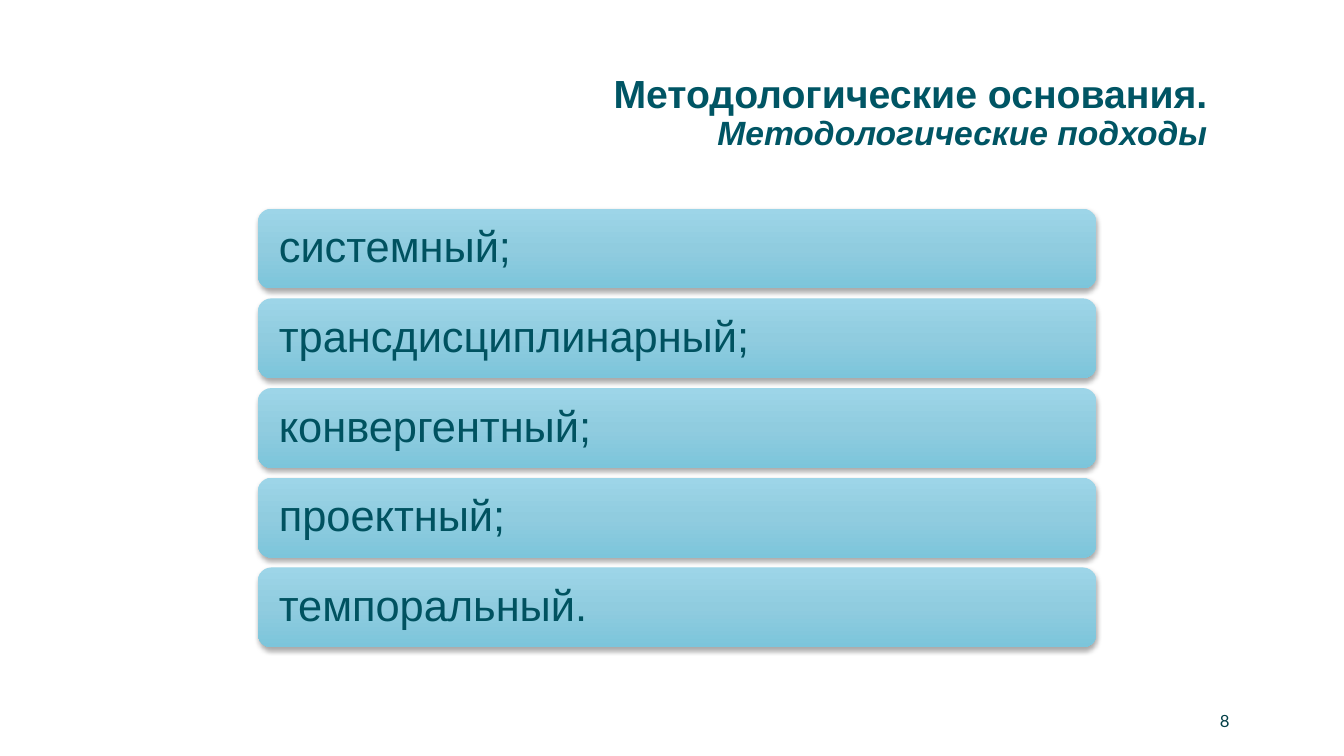
from copy import deepcopy

from lxml import etree
from pptx import Presentation
from pptx import util as u
from pptx.dml.color import RGBColor
from pptx.enum import shapes, text
from pptx.oxml.ns import qn

HEADING = RGBColor(0x00, 0x55, 0x64)
APPROACH = RGBColor(0x00, 0x52, 0x60)
NUMBER = RGBColor(0x02, 0x3F, 0x47)
GRADIENT = [
    (0, RGBColor(0x9D, 0xD5, 0xE8)),
    (0.5, RGBColor(0x90, 0xCC, 0xDF)),
    (1, RGBColor(0x7C, 0xC5, 0xDB)),
]
APPROACHES = [
    "системный;",
    "трансдисциплинарный;",
    "конвергентный;",
    "проектный;",
    "темпоральный.",
]
BAR_LEFT, BAR_TOP, BAR_WIDTH, BAR_HEIGHT = 6.5, 5.26, 21.13, 2.01
BAR_STEP = 2.26


def add_text(paragraph, words, size, color, font="Arial", bold=None, italic=None,
             align=text.PP_ALIGN.LEFT, spacing=None):
    run = paragraph.add_run()
    run.text = words
    run.font.name = font
    run.font.size = u.Pt(size)
    run.font.color.rgb = color
    run.font.bold = bold
    run.font.italic = italic
    paragraph.alignment = align
    paragraph.line_spacing = spacing


def place_heading(slide):
    heading = slide.shapes.title
    heading.left, heading.top = u.Cm(8.94), u.Cm(1.75)
    heading.width, heading.height = u.Cm(21.74), u.Cm(3.35)
    frame = heading.text_frame
    frame.word_wrap = True
    frame.auto_size = text.MSO_AUTO_SIZE.NONE
    frame.vertical_anchor = text.MSO_ANCHOR.TOP
    line = frame.paragraphs[0]
    style = dict(color=HEADING, bold=True, align=text.PP_ALIGN.RIGHT, spacing=0.9)
    add_text(line, "Методологические основания.", 28, **style)
    line.add_line_break()
    add_text(line, "Методологические подходы", 24, italic=True, **style)


def fill_gradient(bar):
    bar.fill.gradient()
    bar.fill.gradient_angle = 270
    stop_list = bar._element.spPr.find(".//" + qn("a:gsLst"))
    stop_list.insert(1, deepcopy(stop_list[0]))
    for stop, (position, color) in zip(bar.fill.gradient_stops, GRADIENT):
        stop.position = position
        stop.color.rgb = color


def cast_shadow(bar):
    bar.shadow.inherit = False
    effects = bar._element.spPr.find(qn("a:effectLst"))
    shadow = etree.SubElement(effects, qn("a:outerShdw"), blurRad=str(u.Pt(3.5)),
                              dist=str(u.Pt(2.2)), dir="5400000", rotWithShape="0")
    black = etree.SubElement(shadow, qn("a:srgbClr"), val="000000")
    etree.SubElement(black, qn("a:alpha"), val="32000")


def add_approach(slide, words, top):
    bar = slide.shapes.add_shape(
        shapes.MSO_SHAPE.ROUNDED_RECTANGLE,
        u.Cm(BAR_LEFT), u.Cm(top), u.Cm(BAR_WIDTH), u.Cm(BAR_HEIGHT))
    fill_gradient(bar)
    bar.line.fill.background()
    cast_shadow(bar)
    frame = bar.text_frame
    frame.word_wrap = True
    frame.vertical_anchor = text.MSO_ANCHOR.MIDDLE
    frame.margin_left = frame.margin_right = u.Cm(0.43)
    add_text(frame.paragraphs[0], words, 31, APPROACH, spacing=0.9)


def add_page_number(slide, number):
    box = slide.shapes.add_textbox(u.Cm(30.05), u.Cm(17.65), u.Cm(1.19), u.Cm(1.02))
    frame = box.text_frame
    frame.word_wrap = True
    frame.vertical_anchor = text.MSO_ANCHOR.MIDDLE
    add_text(frame.paragraphs[0], number, 12, NUMBER, font="Lato",
             align=text.PP_ALIGN.RIGHT)


def main():
    deck = Presentation()
    deck.slide_width, deck.slide_height = u.Cm(33.87), u.Cm(19.05)
    slide = deck.slides.add_slide(deck.slide_layouts.get_by_name("Title Only"))
    place_heading(slide)
    for row, words in enumerate(APPROACHES):
        add_approach(slide, words, BAR_TOP + row * BAR_STEP)
    add_page_number(slide, "8")
    deck.save("out.pptx")


if __name__ == "__main__":
    main()
